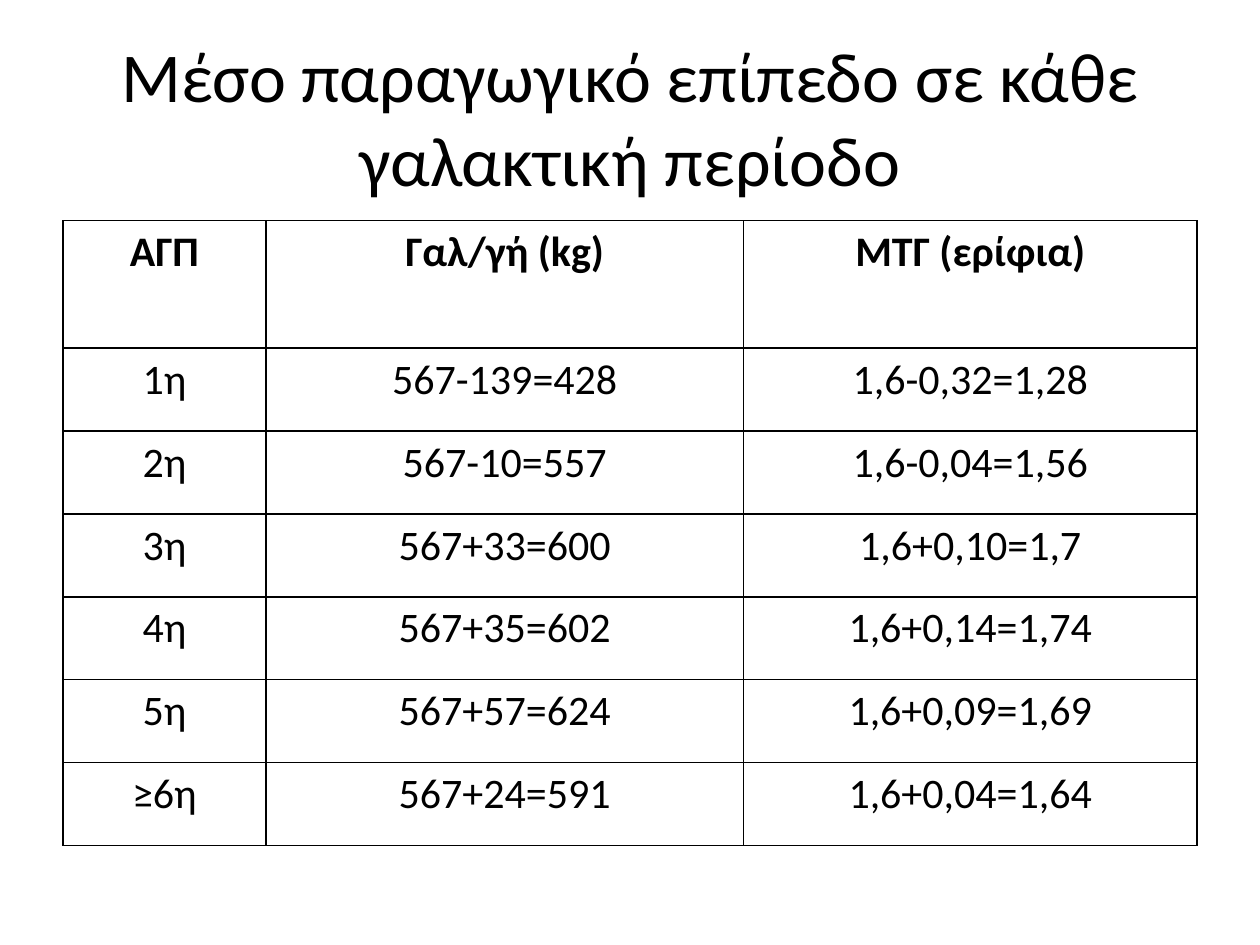
from lxml.etree import SubElement as Sub
from pptx import Presentation
from pptx.dml.color import RGBColor as Rgb
from pptx.enum.text import MSO_ANCHOR as Anchor, PP_ALIGN as Align
from pptx.oxml.ns import qn
from pptx.util import Cm, Pt

FONT = "Calibri"
BLACK, WHITE = "000000", "FFFFFF"
COLS = [4.09, 9.63, 9.14]
HEAD, ROW = 2.57, 1.67
ROWS = [
    ["ΑΓΠ", "Γαλ/γή (kg)", "ΜΤΓ (ερίφια)"],
    ["1η", "567-139=428", "1,6-0,32=1,28"],
    ["2η", "567-10=557", "1,6-0,04=1,56"],
    ["3η", "567+33=600", "1,6+0,10=1,7"],
    ["4η", "567+35=602", "1,6+0,14=1,74"],
    ["5η", "567+57=624", "1,6+0,09=1,69"],
    ["≥6η", "567+24=591", "1,6+0,04=1,64"],
]


def paint(target, color):
    target.rgb = Rgb.from_string(color)


def write(frame, text, size=24, bold=False, color=BLACK, align=Align.CENTER):
    frame.word_wrap = True
    para = frame.paragraphs[0]
    para.alignment = align
    run = para.add_run()
    run.text = text
    run.font.name = FONT
    run.font.size = Pt(size)
    run.font.bold = bold
    paint(run.font.color, color)


def add_title(slide, text):
    box = slide.shapes.add_textbox(Cm(1.27), Cm(0.76), Cm(22.86), Cm(3.18))
    box.text_frame.vertical_anchor = Anchor.MIDDLE
    write(box.text_frame, text, size=40)


def frame_cell(cell, color=BLACK, width=1):
    props = cell._tc.get_or_add_tcPr()
    for side in ("lnL", "lnR", "lnT", "lnB"):
        line = Sub(props, qn(f"a:{side}"), w=str(Pt(width)))
        Sub(Sub(line, qn("a:solidFill")), qn("a:srgbClr"), val=color)


def add_grid(slide, rows):
    high = HEAD + ROW * (len(rows) - 1)
    table = slide.shapes.add_table(
        len(rows), len(COLS), Cm(1.27), Cm(4.45), Cm(sum(COLS)), Cm(high)
    ).table
    table.horz_banding = False
    for col, wide in zip(table.columns, COLS):
        col.width = Cm(wide)
    for i, (row, texts) in enumerate(zip(table.rows, rows)):
        row.height = Cm(ROW if i else HEAD)
        for cell, text in zip(row.cells, texts):
            frame_cell(cell)
            cell.fill.solid()
            paint(cell.fill.fore_color, WHITE)
            write(cell.text_frame, text, bold=i == 0)


def main():
    deck = Presentation()
    deck.slide_width, deck.slide_height = Cm(25.4), Cm(19.05)
    slide = deck.slides.add_slide(deck.slide_layouts[6])

    # Heading
    add_title(slide, "Μέσο παραγωγικό επίπεδο σε κάθε γαλακτική περίοδο")

    # Yield and litter size by lactation
    add_grid(slide, ROWS)

    deck.save("out.pptx")


if __name__ == "__main__":
    main()
